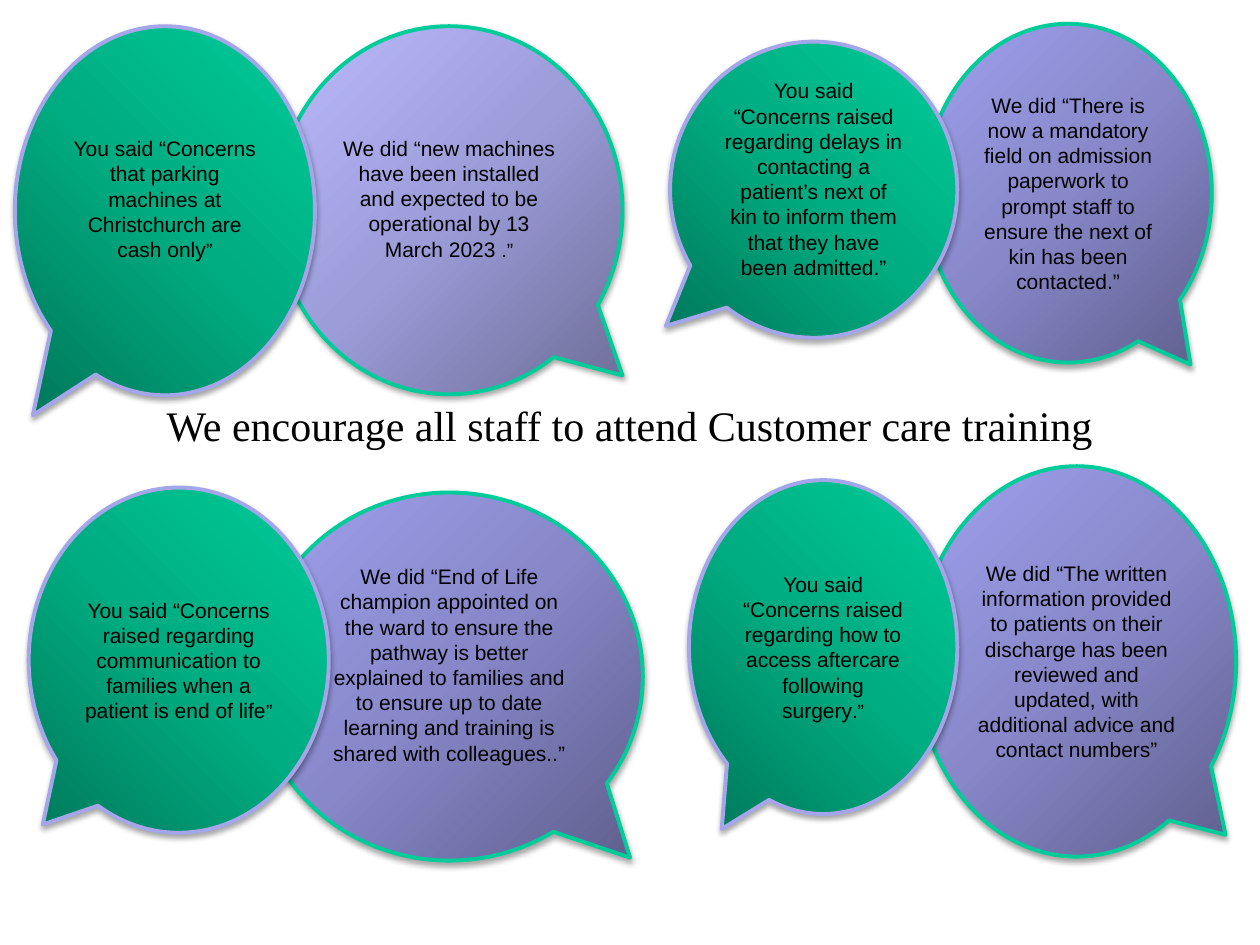
from pptx import Presentation
from pptx import util as u
from pptx.dml.color import RGBColor
from pptx.enum import shapes, text
from pptx.oxml import parse_xml
from pptx.oxml.ns import nsdecls

BLACK = RGBColor(0x00, 0x00, 0x00)
GREEN = RGBColor(0x00, 0xCC, 0x99)
LILAC = RGBColor(0xA5, 0xA5, 0xE9)
GREEN_SHADES = [RGBColor(0x00, 0x79, 0x5B), RGBColor(0x00, 0xAC, 0x81), GREEN]
LILAC_SHADES = [RGBColor(0x5F, 0x5F, 0x8D), RGBColor(0x87, 0x87, 0xC9), RGBColor(0xA0, 0xA0, 0xEE)]
PALE_SHADES = [RGBColor(0x6E, 0x6E, 0x98), RGBColor(0x9C, 0x9C, 0xD9), RGBColor(0xBB, 0xBB, 0xFF)]

# Each style: gradient shades, outline, corner the gradient starts from
YOU_SAID = (GREEN_SHADES, LILAC, 't="100000" r="100000"')
WE_DID = (LILAC_SHADES, GREEN, 'l="100000" t="100000"')
WE_DID_PALE = (PALE_SHADES, GREEN, 'l="100000" t="100000"')

LOW = 0.13  # bottom inset, cm
RAISED_11 = 0.57  # lifts the text by half an 11 pt line
RAISED_12 = 0.61  # lifts the text by half a 12 pt line

# Style, (left, top, width, height) in cm, pointer, bottom inset, 12 pt text, 11 pt ending
BUBBLES = [
    (WE_DID, (18.49, 9.4, 6.43, 7.87), (0.467, 0.444), LOW,
     "We did “The written information provided to patients on their discharge has been "
     "reviewed and updated, with additional advice and contact numbers”", ""),
    (WE_DID, (5.16, 9.93, 7.8, 7.42), (0.467, 0.492), RAISED_12,
     "We did “End of Life champion appointed on the ward to ensure the pathway is better "
     "explained to families and to ensure up to date learning and training is shared "
     "with colleagues..”", ""),
    (YOU_SAID, (0.58, 9.83, 6.05, 6.96), (-0.453, 0.476), LOW,
     "You said “Concerns raised regarding communication to families when a patient is "
     "end of life", "”"),
    (WE_DID_PALE, (5.56, 0.53, 6.99, 7.42), (0.5, 0.449), RAISED_12,
     "We did “new machines have been installed and expected to be operational by "
     "13 March 2023 ", ".”"),
    (WE_DID, (18.64, 0.48, 5.79, 6.83), (0.426, 0.506), LOW,
     "We did “There is now a mandatory field on admission paperwork to prompt staff to "
     "ensure the next of kin has been contacted.”", ""),
    (YOU_SAID, (13.89, 9.68, 5.41, 6.73), (-0.378, 0.545), LOW,
     "You said “Concerns raised regarding how to access aftercare following surgery", ".”"),
    (YOU_SAID, (13.51, 0.84, 5.79, 5.97), (-0.515, 0.46), RAISED_11,
     "You said “Concerns raised regarding delays in contacting a patient’s next of kin "
     "to inform them that they have been admitted.”", ""),
    (YOU_SAID, (0.3, 0.53, 6.05, 7.44), (-0.44, 0.554), RAISED_12,
     "You said “Concerns that parking machines at Christchurch are cash only", "”"),
]


def add_gradient_and_shadow(shape, shades, corner):
    """Fill the shape outwards from a corner and drop a soft shadow below it."""
    stops = "".join(
        f'<a:gs pos="{index * 50000}"><a:srgbClr val="{shade}"/></a:gs>'
        for index, shade in enumerate(shades))
    properties = shape._element.spPr
    properties.append(parse_xml(
        f'<a:gradFill {nsdecls("a")} rotWithShape="1"><a:gsLst>{stops}</a:gsLst>'
        f'<a:path path="circle"><a:fillToRect {corner}/></a:path></a:gradFill>'))
    properties.append(parse_xml(
        f'<a:effectLst {nsdecls("a")}><a:outerShdw blurRad="40000" dist="23000" '
        'dir="5400000" rotWithShape="0"><a:srgbClr val="000000">'
        '<a:alpha val="35000"/></a:srgbClr></a:outerShdw></a:effectLst>'))


presentation = Presentation()
presentation.slide_width = u.Cm(25.4)
presentation.slide_height = u.Cm(19.05)
slide = presentation.slides.add_slide(presentation.slide_layouts[6])

for number, (style, box, pointer, bottom, words, ending) in enumerate(BUBBLES):
    shades, outline, corner = style
    bubble = slide.shapes.add_shape(
        shapes.MSO_SHAPE.OVAL_CALLOUT, *(u.Cm(length) for length in box))
    bubble.adjustments[0], bubble.adjustments[1] = pointer
    add_gradient_and_shadow(bubble, shades, corner)
    bubble.line.color.rgb = outline
    bubble.line.width = u.Pt(2.25)
    frame = bubble.text_frame
    frame.word_wrap = True
    frame.vertical_anchor = text.MSO_ANCHOR.MIDDLE
    frame.margin_bottom = u.Cm(bottom)
    paragraph = frame.paragraphs[0]
    paragraph.alignment = text.PP_ALIGN.CENTER
    for part, size in ((words, 12), (ending, 11)):
        if part:
            run = paragraph.add_run()
            run.text = part
            run.font.name = "Arial"
            run.font.size = u.Pt(size)
            run.font.color.rgb = BLACK

    if number == 0:  # the heading lies just above the first bubble
        heading = slide.shapes.add_textbox(u.Cm(1.9), u.Cm(7.92), u.Cm(21.6), u.Cm(1.27))
        heading.text_frame.word_wrap = True
        paragraph = heading.text_frame.paragraphs[0]
        paragraph.text = "We encourage all staff to attend Customer care training"
        paragraph.alignment = text.PP_ALIGN.CENTER
        paragraph.font.name = "Times New Roman"
        paragraph.font.size = u.Pt(24)
        paragraph.font.color.rgb = BLACK

presentation.save("out.pptx")
